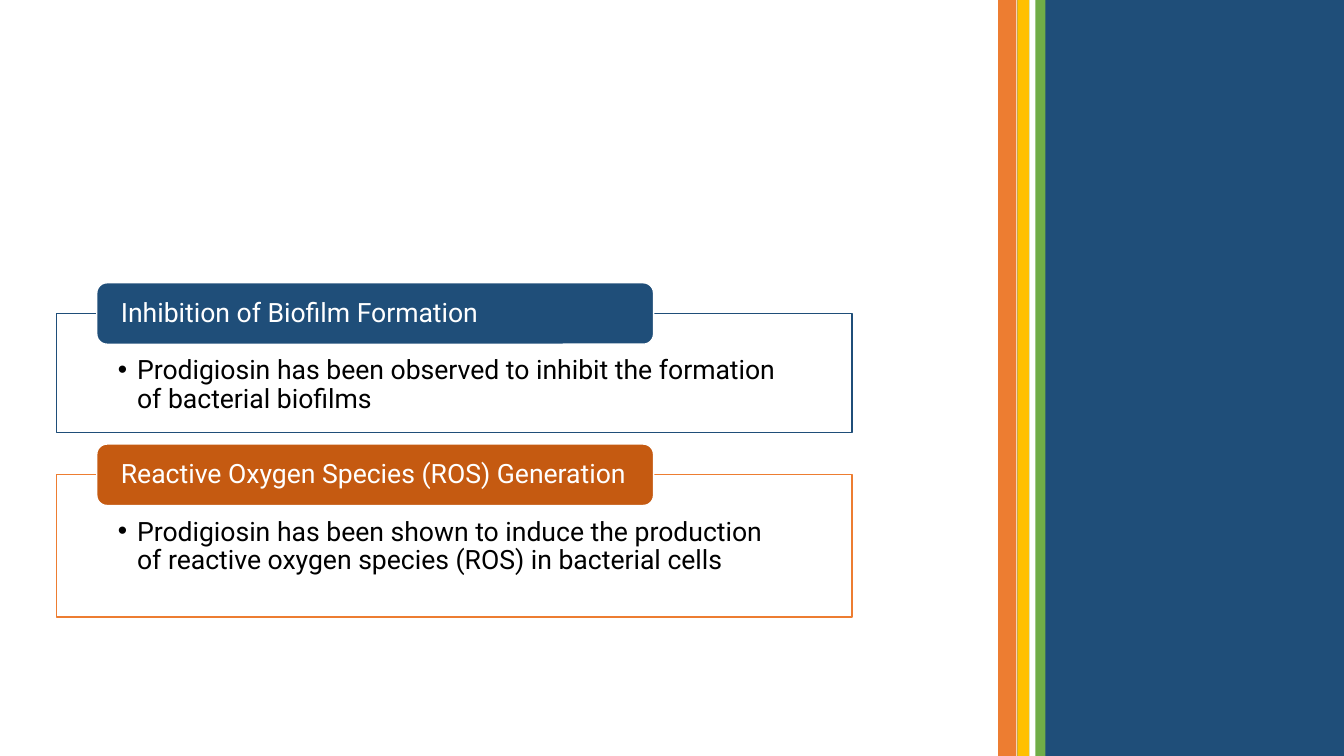
from lxml import etree
from pptx import Presentation, util as u
from pptx.dml.color import RGBColor
from pptx.enum import shapes, text
from pptx.oxml.ns import qn

COLORS = {
    "navy": "1F4E79",
    "orange": "ED7D31",
    "rust": "C55A11",
    "gold": "FFC000",
    "green": "70AD47",
    "white": "FFFFFF",
    "black": "000000",
}
FONT = "Roboto"
TEXT_SIZE = 19

# left, width, colour, from back to front
STRIPES = [
    (10.09, 3.25, "navy"),
    (9.9, 0.18, "orange"),
    (10.09, 0.13, "gold"),
    (10.21, 0.16, "green"),
    (10.21, 0.06, "white"),
]

# top, height, outline colour, tab colour, heading, bullet text
PANELS = [
    (3.11, 1.18, "navy", "navy", "Inhibition of Biofilm Formation",
     "Prodigiosin has been observed to inhibit the formation of bacterial biofilms"),
    (4.71, 1.41, "orange", "rust", "Reactive Oxygen Species (ROS) Generation",
     "Prodigiosin has been shown to induce the production of reactive oxygen "
     "species (ROS) in bacterial cells"),
]


def rgb(name):
    return RGBColor.from_string(COLORS[name])


def add_block(page, kind, box, fill, line=None):
    """Add a flat shape at box (left, top, width, height in inches)."""
    shape = page.shapes.add_shape(kind, *(u.Inches(length) for length in box))
    shape.shadow.inherit = False
    shape.fill.solid()
    shape.fill.fore_color.rgb = rgb(fill)
    if line:
        shape.line.color.rgb = rgb(line)
        shape.line.width = u.Pt(1)
    else:
        shape.line.fill.background()
    return shape


def set_opacity(shape, percent):
    color = shape.fill._xPr.find(qn("a:solidFill"))[0]
    etree.SubElement(color, qn("a:alpha"), val=str(percent * 1000))


def add_bullet(para, indent):
    para.level = 1
    props = para._p.get_or_add_pPr()
    props.set("marL", str(u.Inches(indent)))
    props.set("indent", str(-u.Inches(indent)))
    etree.SubElement(props, qn("a:buFont"), typeface="Arial")
    etree.SubElement(props, qn("a:buChar"), char="•")


def write(shape, words, color, insets, anchor, bullet_indent=None):
    """Fill the shape with one left-aligned paragraph; insets are left, top, right, bottom."""
    frame = shape.text_frame
    frame.word_wrap = True
    frame.vertical_anchor = anchor
    (frame.margin_left, frame.margin_top,
     frame.margin_right, frame.margin_bottom) = (u.Inches(inset) for inset in insets)
    para = frame.paragraphs[0]
    if bullet_indent:
        add_bullet(para, bullet_indent)
    para.alignment = text.PP_ALIGN.LEFT
    para.line_spacing = 0.9
    span = para.add_run()
    span.text = words
    span.font.name = FONT
    span.font.size = u.Pt(TEXT_SIZE)
    span.font.color.rgb = rgb(color)


def add_side_band(page, height):
    for left, width, color in STRIPES:
        add_block(page, shapes.MSO_SHAPE.RECTANGLE, (left, 0, width, height), color)


def add_panel(page, box, outline, tab_color, heading, bullet):
    """Add an outlined box with a heading tab straddling its top edge."""
    left, top, width, _ = box
    body = add_block(page, shapes.MSO_SHAPE.RECTANGLE, box, "white", outline)
    set_opacity(body, 90)
    write(body, bullet, "black", (0.61, 0.43, 0.61, 0.15), text.MSO_ANCHOR.TOP, 0.19)

    tab_height = 0.61
    tab_box = (left + 0.4, top - tab_height / 2, width * 0.7, tab_height)
    tab = add_block(page, shapes.MSO_SHAPE.ROUNDED_RECTANGLE, tab_box, tab_color, "white")
    write(tab, heading, "white", (0.21, 0, 0.21, 0), text.MSO_ANCHOR.MIDDLE)


def main():
    deck = Presentation()
    deck.slide_width, deck.slide_height = u.Inches(13.33), u.Inches(7.5)
    page = deck.slides.add_slide(deck.slide_layouts[6])
    add_side_band(page, 7.5)
    for top, height, *details in PANELS:
        add_panel(page, (0.56, top, 7.89, height), *details)
    deck.save("out.pptx")


if __name__ == "__main__":
    main()
